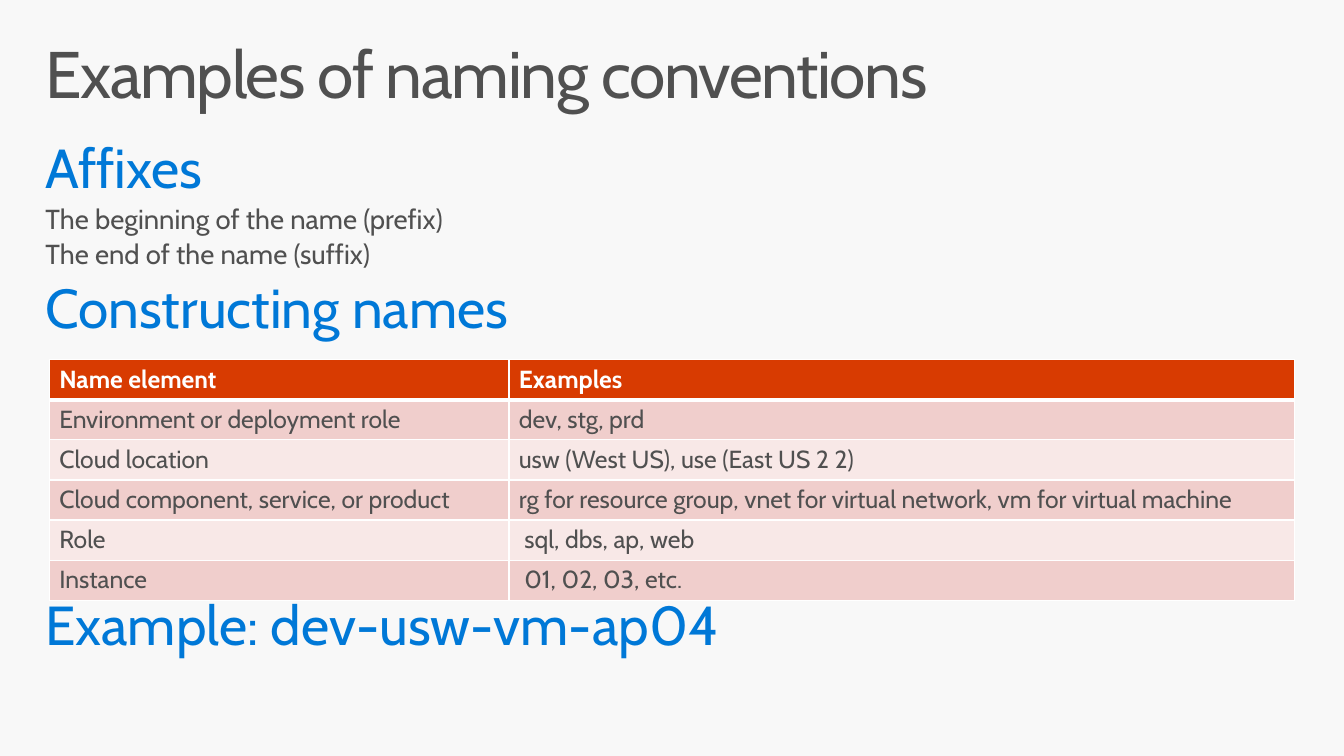
import pptx
import pptx.dml.color
import pptx.enum.text
import pptx.oxml
import pptx.oxml.ns
import pptx.util

Pt = pptx.util.Pt

# Content
TITLE = "Examples of naming conventions"
# Text, list level, space before; the last gap leaves room for the table
OUTLINE = [
    ("Affixes", 0, 0),
    ("The beginning of the name (prefix)", 1, 3.8),
    ("The end of the name (suffix)", 1, 3.8),
    ("Constructing names", 0, 7.8),
    ("Example: dev-usw-vm-ap04", 0, 188),
]
NAME_ELEMENTS = [
    ("Name element", "Examples"),
    ("Environment or deployment role", "dev, stg, prd"),
    ("Cloud location", "usw (West US), use (East US 2 2)"),
    ("Cloud component, service, or product",
     "rg for resource group, vnet for virtual network, vm for virtual machine"),
    ("Role", " sql, dbs, ap, web"),
    ("Instance", " 01, 02, 03, etc."),
]

# Style
FONT = "Cabin"
COLORS = {
    "background": "F8F8F8",
    "text": "505050",
    "heading": "0078D7",
    "header": "D83B01",
    "dark_band": "F0CECC",
    "light_band": "F8E8E7",
    "white": "FFFFFF",
}
LEVEL_STYLES = [(40, "heading"), (20, "text")]

# Layout in points
SLIDE_SIZE = (979.2, 550.8)
TITLE_BOX = (21.6, 23.04, 936, 72)
BODY_BOX = (21.6, 95.76, 936, 404.64)
TABLE_LEFT, TABLE_TOP = 36, 262.08
COLUMN_WIDTHS = (334.8, 572.4)
ROW_HEIGHT = 29.16


def rgb(name):
    return pptx.dml.color.RGBColor.from_string(COLORS[name])


def format_runs(paragraph, size, color, bold=False):
    for run in paragraph.runs:
        run.font.name = FONT
        run.font.size = Pt(size)
        run.font.bold = bold
        run.font.color.rgb = rgb(color)


def place(shape, box):
    shape.left, shape.top, shape.width, shape.height = map(Pt, box)
    frame = shape.text_frame
    frame.margin_left = frame.margin_right = Pt(11.52)
    frame.margin_top = frame.margin_bottom = Pt(7.2)
    frame.vertical_anchor = pptx.enum.text.MSO_ANCHOR.TOP
    frame.auto_size = pptx.enum.text.MSO_AUTO_SIZE.NONE
    frame.word_wrap = True
    return frame


def format_paragraph(paragraph, space_before=0):
    paragraph.alignment = pptx.enum.text.PP_ALIGN.LEFT
    paragraph.line_spacing = 0.9
    paragraph.space_before = Pt(space_before)
    paragraph.space_after = Pt(0)


def remove_bullet(paragraph):
    properties = paragraph._p.get_or_add_pPr()
    properties.set("marL", "0")
    properties.set("indent", "0")
    properties.append(pptx.oxml.parse_xml(
        f"<a:buNone {pptx.oxml.ns.nsdecls('a')}/>"))


def add_border(cell, side, width):
    cell._tc.get_or_add_tcPr().append(pptx.oxml.parse_xml(
        f'<a:ln{side} {pptx.oxml.ns.nsdecls("a")} w="{Pt(width)}">'
        f'<a:solidFill><a:srgbClr val="{COLORS["white"]}"/></a:solidFill>'
        f'</a:ln{side}>'))


def add_title(slide):
    frame = place(slide.shapes.title, TITLE_BOX)
    frame.text = TITLE
    paragraph = frame.paragraphs[0]
    format_paragraph(paragraph)
    format_runs(paragraph, 48, "text")
    paragraph.runs[0].font._element.set("spc", "-100")


def add_outline(slide):
    frame = place(slide.placeholders[1], BODY_BOX)
    frame.text = "\n".join(text for text, level, gap in OUTLINE)
    for paragraph, (text, level, gap) in zip(frame.paragraphs, OUTLINE):
        paragraph.level = level
        format_paragraph(paragraph, gap)
        remove_bullet(paragraph)
        format_runs(paragraph, *LEVEL_STYLES[level])


def add_name_table(slide):
    row_count = len(NAME_ELEMENTS)
    table = slide.shapes.add_table(
        row_count, len(COLUMN_WIDTHS), Pt(TABLE_LEFT), Pt(TABLE_TOP),
        Pt(sum(COLUMN_WIDTHS)), Pt(ROW_HEIGHT * row_count)).table
    for column, width in zip(table.columns, COLUMN_WIDTHS):
        column.width = Pt(width)
    for row_index, texts in enumerate(NAME_ELEMENTS):
        table.rows[row_index].height = Pt(ROW_HEIGHT)
        is_header = row_index == 0
        band = "dark_band" if row_index % 2 else "light_band"
        for column_index, text in enumerate(texts):
            cell = table.cell(row_index, column_index)
            cell.text_frame.text = text
            format_runs(cell.text_frame.paragraphs[0], 18,
                        "white" if is_header else "text", is_header)
            # A thicker line separates the header from the first row
            add_border(cell, "L", 1)
            add_border(cell, "R", 1)
            add_border(cell, "T", 3 if row_index == 1 else 1)
            add_border(cell, "B", 3 if is_header else 1)
            cell.fill.solid()
            cell.fill.fore_color.rgb = rgb("header" if is_header else band)


def main():
    presentation = pptx.Presentation()
    presentation.slide_width, presentation.slide_height = map(Pt, SLIDE_SIZE)
    slide = presentation.slides.add_slide(presentation.slide_layouts[1])
    slide.background.fill.solid()
    slide.background.fill.fore_color.rgb = rgb("background")
    add_title(slide)
    add_outline(slide)
    add_name_table(slide)
    presentation.save("out.pptx")


if __name__ == "__main__":
    main()
